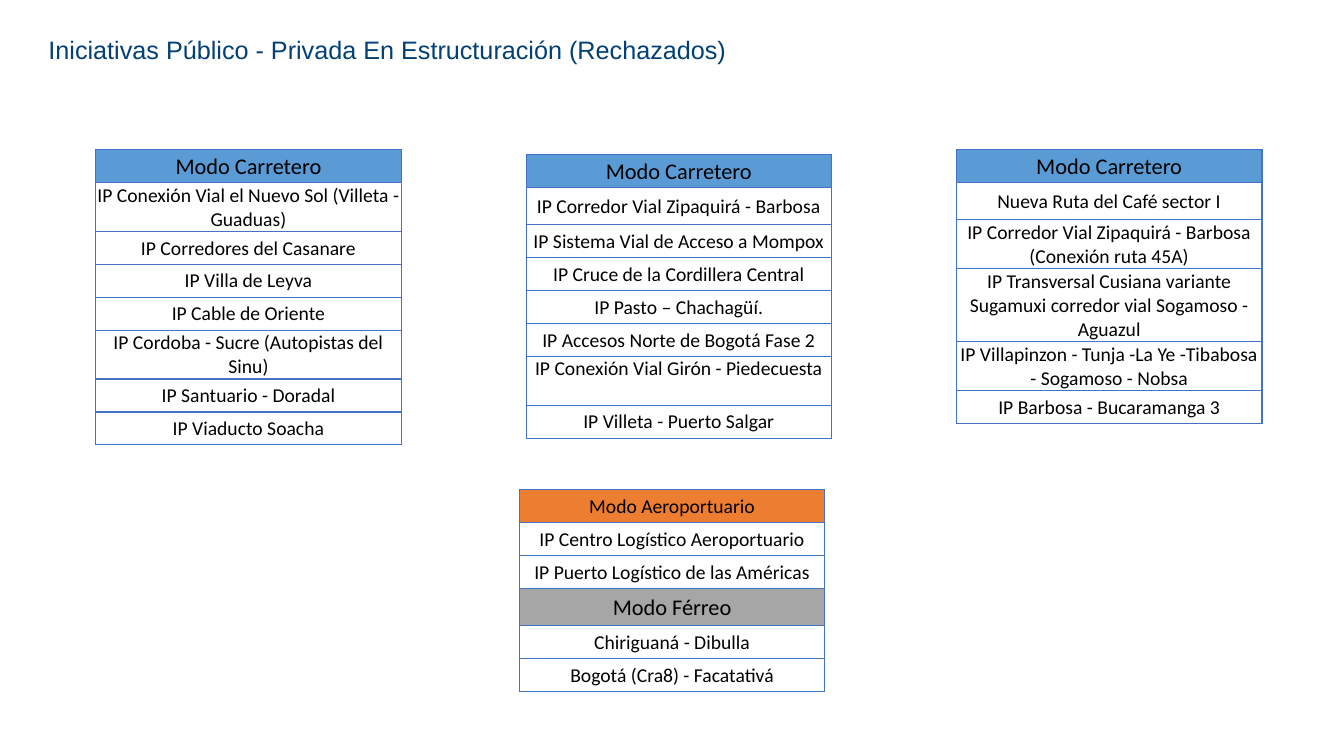
from dataclasses import dataclass

from lxml.etree import SubElement
from pptx import Presentation
from pptx.dml.color import RGBColor
from pptx.enum.text import MSO_ANCHOR as Anchor, PP_ALIGN as Align
from pptx.oxml.ns import qn
from pptx.slide import Slide
from pptx.table import _Cell as Cell
from pptx.text.text import TextFrame
from pptx.util import Length, Pt

NAVY = RGBColor(0x02, 0x40, 0x77)
BLACK = RGBColor(0, 0, 0)
WHITE = RGBColor(0xFF, 0xFF, 0xFF)
ROAD_BLUE = RGBColor(0x5B, 0x9B, 0xD5)
AIR_ORANGE = RGBColor(0xED, 0x7D, 0x31)
RAIL_GREY = RGBColor(0xA6, 0xA6, 0xA6)
BORDER_BLUE = RGBColor(0x44, 0x72, 0xC4)

TABLE_WIDTH = Pt(218.2)
ONE_LINE, ROOMY, TWO_LINES, THREE_LINES = Pt(23.5), Pt(26.7), Pt(35), Pt(52.2)


@dataclass(frozen=True)
class Row:
    text: str
    height: Length = ONE_LINE
    size: int = 14
    fill: RGBColor = WHITE
    anchor: Anchor = Anchor.MIDDLE


@dataclass(frozen=True)
class ModeTable:
    left: Length
    top: Length
    rows: tuple[Row, ...]


ROAD_HEADER = Row("Modo Carretero", size=16, fill=ROAD_BLUE)

MODE_TABLES = (
    ModeTable(Pt(68.4), Pt(106.8), (
        ROAD_HEADER,
        Row("IP Conexión Vial el Nuevo Sol (Villeta - Guaduas)", TWO_LINES),
        Row("IP Corredores del Casanare"),
        Row("IP Villa de Leyva"),
        Row("IP Cable de Oriente"),
        Row("IP Cordoba - Sucre (Autopistas del Sinu)", TWO_LINES),
        Row("IP Santuario - Doradal"),
        Row("IP Viaducto Soacha"),
    )),
    ModeTable(Pt(375.8), Pt(110.3), (
        ROAD_HEADER,
        Row("IP Corredor Vial Zipaquirá - Barbosa", ROOMY),
        Row("IP Sistema Vial de Acceso a Mompox"),
        Row("IP Cruce de la Cordillera Central"),
        Row("IP Pasto – Chachagüí."),
        Row("IP Accesos Norte de Bogotá Fase 2"),
        Row("IP Conexión Vial Girón - Piedecuesta", TWO_LINES, anchor=Anchor.TOP),
        Row("IP Villeta - Puerto Salgar"),
    )),
    ModeTable(Pt(683.2), Pt(106.8), (
        ROAD_HEADER,
        Row("Nueva Ruta del Café sector I", ROOMY),
        Row("IP Corredor Vial Zipaquirá - Barbosa\v(Conexión ruta 45A)", TWO_LINES),
        Row("IP Transversal Cusiana variante Sugamuxi corredor vial Sogamoso - Aguazul",
            THREE_LINES),
        Row("IP Villapinzon - Tunja -La Ye -Tibabosa - Sogamoso - Nobsa", TWO_LINES),
        Row("IP Barbosa - Bucaramanga 3"),
    )),
    ModeTable(Pt(371), Pt(349.7), (
        Row("Modo Aeroportuario", fill=AIR_ORANGE),
        Row("IP Centro Logístico Aeroportuario"),
        Row("IP Puerto Logístico de las Américas"),
        Row("Modo Férreo", ROOMY, size=16, fill=RAIL_GREY),
        Row("Chiriguaná - Dibulla"),
        Row("Bogotá (Cra8) - Facatativá"),
    )),
)


def write_text(frame: TextFrame, text: str, *, font: str, size: float,
               color: RGBColor, align: Align, line_spacing: float = 1.0) -> None:
    paragraph = frame.paragraphs[0]
    paragraph.text = text
    paragraph.alignment = align
    paragraph.line_spacing = line_spacing
    paragraph.space_before = Pt(0)
    for run in paragraph.runs:
        run.font.name = font
        run.font.size = Pt(size)
        run.font.bold = False
        run.font.color.rgb = color


def add_borders(cell: Cell) -> None:
    """Outline all four sides; borders must precede the fill in the cell XML."""
    properties = cell._tc.get_or_add_tcPr()
    for side in ("a:lnL", "a:lnR", "a:lnT", "a:lnB"):
        border = SubElement(properties, qn(side), w=str(Pt(1)))
        solid = SubElement(border, qn("a:solidFill"))
        SubElement(solid, qn("a:srgbClr"), val=str(BORDER_BLUE))


def draw_cell(cell: Cell, row: Row) -> None:
    add_borders(cell)
    cell.fill.solid()
    cell.fill.fore_color.rgb = row.fill
    cell.margin_left = cell.margin_right = cell.margin_top = Pt(0.7)
    cell.margin_bottom = Pt(0)
    cell.vertical_anchor = row.anchor
    write_text(cell.text_frame, row.text, font="Calibri", size=row.size,
               color=BLACK, align=Align.CENTER)


def draw_mode_table(slide: Slide, mode: ModeTable) -> None:
    height = sum(row.height for row in mode.rows)
    table = slide.shapes.add_table(len(mode.rows), 1, mode.left, mode.top,
                                   TABLE_WIDTH, height).table
    table.first_row = table.horz_banding = False
    for index, row in enumerate(mode.rows):
        table.rows[index].height = row.height
        draw_cell(table.cell(index, 0), row)


def draw_title(slide: Slide) -> None:
    title = slide.shapes.title
    title.left, title.top, title.width, title.height = Pt(27.4), Pt(25.2), Pt(594.7), Pt(46.8)
    title.text_frame.word_wrap = True
    title.text_frame.vertical_anchor = Anchor.TOP
    write_text(title.text_frame,
               "Iniciativas Público - Privada En Estructuración (Rechazados)",
               font="Arial", size=18, color=NAVY, align=Align.LEFT, line_spacing=0.8)


def main() -> None:
    presentation = Presentation()
    presentation.slide_width, presentation.slide_height = Pt(960), Pt(540)
    slide = presentation.slides.add_slide(presentation.slide_layouts.get_by_name("Title Only"))
    draw_title(slide)
    for mode in MODE_TABLES:
        draw_mode_table(slide, mode)
    presentation.save("out.pptx")


if __name__ == "__main__":
    main()
